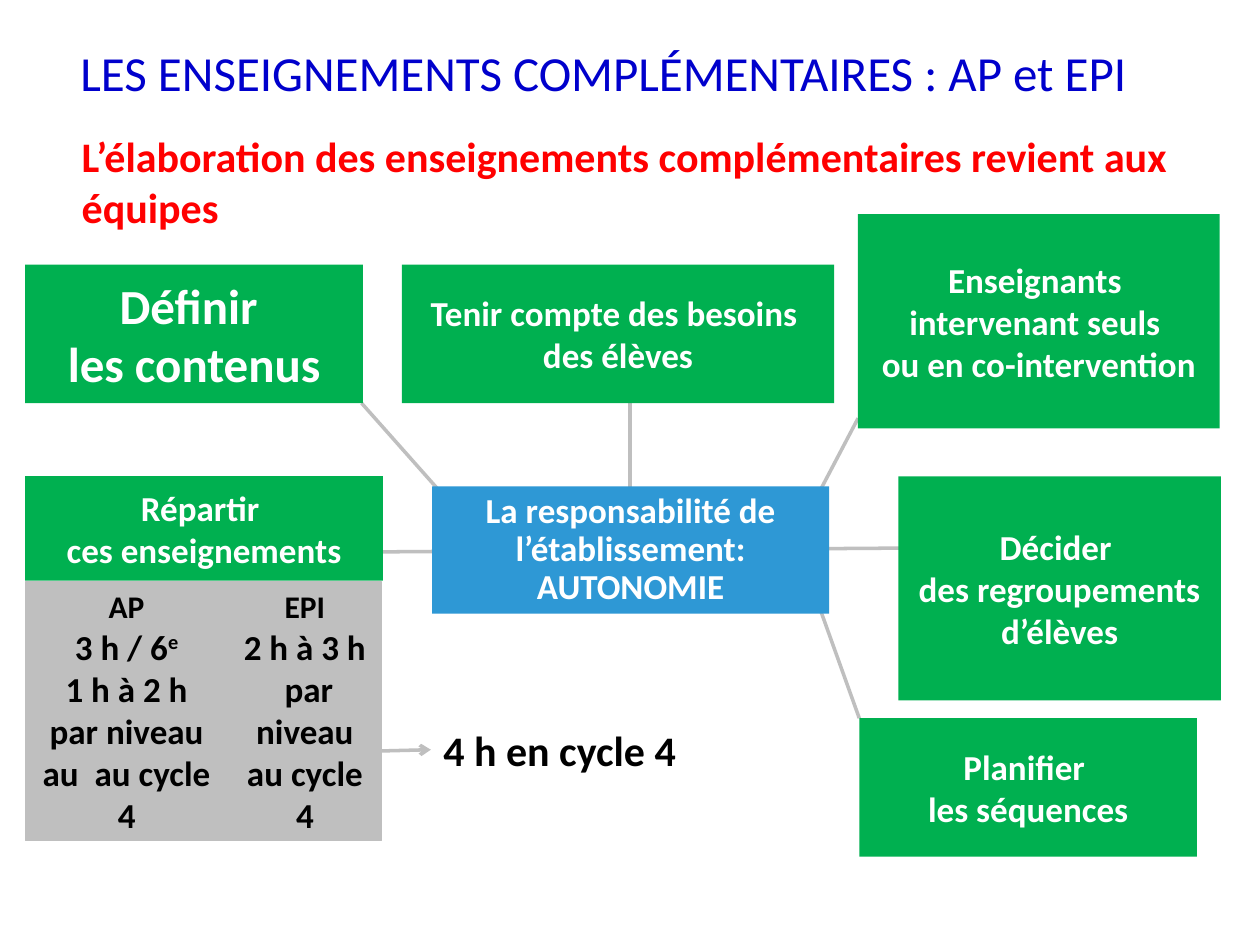
from lxml import etree
from pptx import Presentation
from pptx.dml.color import RGBColor
from pptx.enum.shapes import MSO_CONNECTOR, MSO_SHAPE
from pptx.enum.text import MSO_ANCHOR, MSO_AUTO_SIZE, PP_ALIGN
from pptx.oxml.ns import qn
from pptx.util import Inches, Pt

STRAIGHT = MSO_CONNECTOR.STRAIGHT
RECTANGLE = MSO_SHAPE.RECTANGLE
TOP, MIDDLE, BOTTOM = MSO_ANCHOR.TOP, MSO_ANCHOR.MIDDLE, MSO_ANCHOR.BOTTOM
FIT_SHAPE = MSO_AUTO_SIZE.SHAPE_TO_FIT_TEXT
LEFT, CENTER = PP_ALIGN.LEFT, PP_ALIGN.CENTER

FONT = "Calibri"
WHITE, BLACK, GREY = "FFFFFF", "000000", "BFBFBF"
GREEN, BLUE, NAVY, RED = "00B050", "2E98D5", "0000CC", "FF0000"


def color(value):
    """Turn a hex string into a colour."""
    return RGBColor.from_string(value)


def write(frame, paragraphs, ink, align=CENTER, bold=True):
    """Fill a frame with paragraphs of (text, size, baseline) runs."""
    for index, runs in enumerate(paragraphs):
        paragraph = frame.add_paragraph() if index else frame.paragraphs[0]
        paragraph.alignment = align
        for text, size, baseline in runs:
            for row, line in enumerate(text.split("\n")):
                if row:
                    paragraph.add_line_break()
                if not line:
                    continue
                run = paragraph.add_run()
                run.text = line
                run.font.name = FONT
                run.font.size = Pt(size)
                run.font.bold = bold
                run.font.color.rgb = color(ink)
                if baseline:
                    run.font._element.set("baseline", str(baseline))


def add_block(slide, box, paragraphs, fill, ink=WHITE, outline=None):
    """Draw a filled rectangle with centred text."""
    block = slide.shapes.add_shape(RECTANGLE, *map(Inches, box))
    block.shadow.inherit = False
    block.fill.solid()
    block.fill.fore_color.rgb = color(fill)
    if outline:
        block.line.color.rgb = color(outline)
        block.line.width = Pt(0.75)
    else:
        block.line.fill.background()
    frame = block.text_frame
    frame.word_wrap = True
    frame.vertical_anchor = MIDDLE
    write(frame, paragraphs, ink)
    return block


def add_label(slide, box, text, size, ink, anchor=TOP, bold=True, wrap=True):
    """Place a left-aligned line of text without a fill."""
    label = slide.shapes.add_textbox(*map(Inches, box))
    frame = label.text_frame
    frame.word_wrap = wrap
    frame.vertical_anchor = anchor
    write(frame, [[(text, size, 0)]], ink, LEFT, bold)
    return label


def add_link(slide, start, end):
    """Draw a grey straight connector."""
    link = slide.shapes.add_connector(STRAIGHT, *map(Inches, (*start, *end)))
    link.line.color.rgb = color(GREY)
    link.line.width = Pt(2)
    etree.SubElement(link._element.spPr, qn("a:effectLst"))
    return link


def add_heading(slide, box):
    """Place the title and the red statement under it."""
    left, top, width, height = box
    add_label(slide, (left, top, 8.98, 0.72),
              "LES ENSEIGNEMENTS COMPLÉMENTAIRES : AP et EPI",
              28, NAVY, BOTTOM, bold=False)
    add_label(slide, (left + 0.01, top + 0.86, width - 0.01, height - 0.86),
              "L’élaboration des enseignements complémentaires revient aux équipes",
              24, RED)


def add_autonomy_map(slide, box):
    """Draw the central responsibility, its links and the tasks around it."""
    left, top, width, height = box
    right, bottom = left + width, top + height
    links = [
        ((right - 0.08, bottom - 0.06), (right + 0.24, bottom + 0.83)),
        ((left - 0.56, top - 0.66), (left + 0.07, top + 0.05)),
        ((right + 0.62, top + 0.49), (left - 0.4, top + 0.52)),
        ((left + 1.57, top - 1.17), (left + 1.57, top + 0.76)),
        ((right + 0.23, top - 0.54), (right - 0.08, top + 0.05)),
    ]
    for start, end in links:
        add_link(slide, start, end)

    tasks = [
        (3.39, 1.84, 2.68, 1.1, 20, ["Planifier \nles séquences"]),
        (3.7, -0.08, 2.56, 1.78, 20,
         ["Décider \ndes regroupements", "d’élèves"]),
        (3.38, -2.16, 2.87, 1.7, 20,
         ["Enseignants \nintervenant seuls \nou en co-intervention"]),
        (-3.23, -0.08, 2.84, 0.83, 20, ["Répartir \nces enseignements"]),
        (-3.23, -1.76, 2.68, 1.1, 28, ["Définir \nles contenus"]),
        (-0.24, -1.76, 3.43, 1.1, 20,
         ["Tenir compte des besoins ", "des élèves"]),
    ]
    for dx, dy, task_width, task_height, size, texts in tasks:
        add_block(slide, (left + dx, top + dy, task_width, task_height),
                  [[(text, size, 0)] for text in texts], GREEN)

    hub = add_block(
        slide, box,
        [[("La responsabilité de l’établissement: AUTONOMIE", 20, 0)]], BLUE)
    hub.text_frame.paragraphs[0].line_spacing = 0.9


def add_hours(slide, box):
    """Draw the AP and EPI hours with the total they lead to."""
    left, top, width, height = box
    ap_width = 1.61
    add_block(slide, (left + ap_width, top, width - ap_width, height),
              [[("EPI\n", 18, 0), ("2 h à 3 h  par niveau au cycle 4", 20, 0)]],
              GREY, BLACK, GREY)
    add_block(slide, (left, top, ap_width, height),
              [[("AP", 18, 0)],
               [("3 h / 6", 20, 0), ("e", 20, 30000)],
               [("1 h à 2 h par niveau au  au cycle 4", 20, 0)]],
              GREY, BLACK, GREY)
    total = add_label(slide, (left + 3.22, top + 1.08, 2.06, 0.5),
                      "4 h en cycle 4", 24, BLACK, wrap=False)
    total.text_frame.auto_size = FIT_SHAPE
    arrow = add_link(slide, (left + width, top + 1.34), (left + 3.22, top + 1.33))
    arrow.end_connect(total, 1)
    etree.SubElement(arrow.line._get_or_add_ln(), qn("a:tailEnd"), type="arrow")


def main():
    """Build and save the slide."""
    deck = Presentation()
    deck.slide_width, deck.slide_height = Inches(10), Inches(7.5)
    slide = deck.slides.add_slide(deck.slide_layouts[6])
    add_heading(slide, (0.54, 0.13, 9.14, 1.73))
    add_hours(slide, (0.2, 4.62, 2.83, 2.05))
    add_autonomy_map(slide, (3.43, 3.86, 3.15, 1.01))
    deck.save("out.pptx")


if __name__ == "__main__":
    main()
